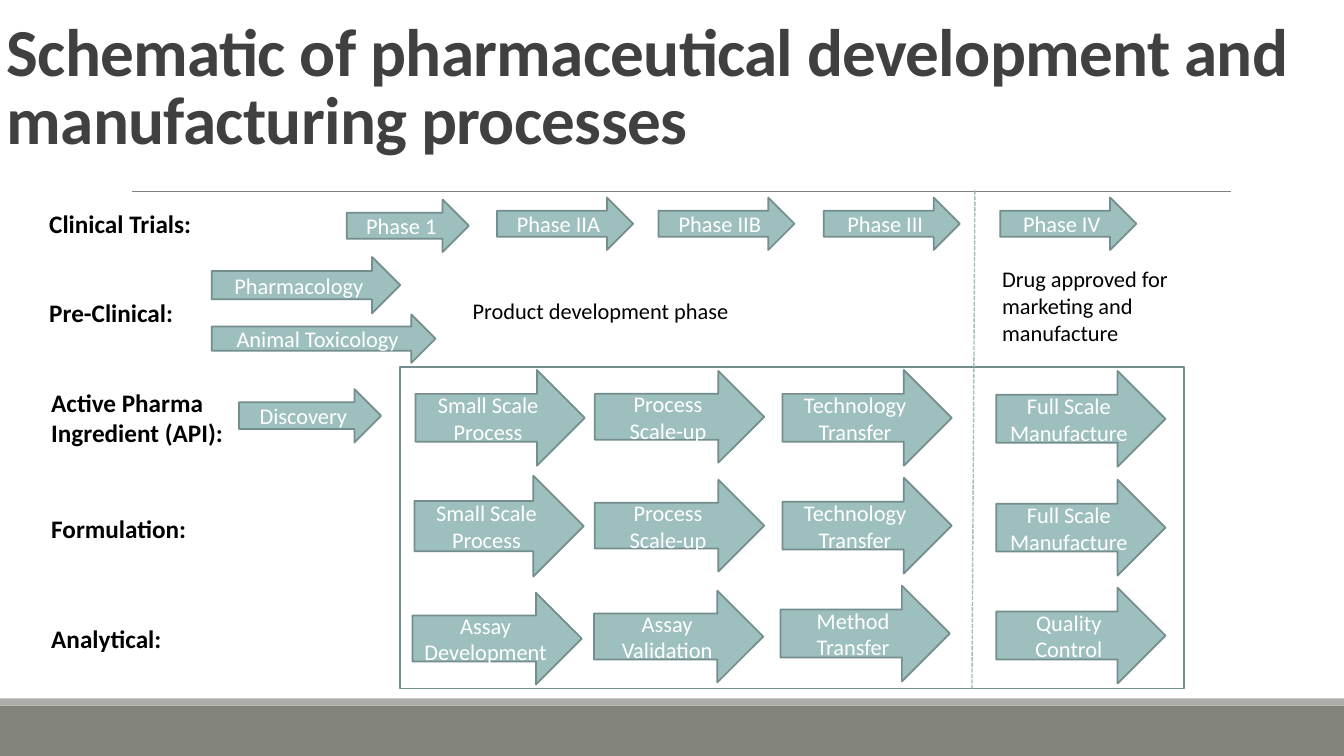
"""Build a slide showing the stages of pharmaceutical development and manufacture."""
from lxml import etree
from pptx import Presentation
from pptx import util as u
from pptx.dml.color import RGBColor
from pptx.enum import dml, shapes, text
from pptx.oxml import ns

hues = {"band": "82847C", "strip": "ACADA8", "rule": "808080", "title": "404040",
        "ink": "000000", "white": "FFFFFF", "teal": "9DBFBE", "edge": "748D8D"}
tone = {name: RGBColor.from_string(code) for name, code in hues.items()}

deck = Presentation()
deck.slide_width, deck.slide_height = u.Inches(13.33), u.Inches(7.5)
slide = deck.slides.add_slide(deck.slide_layouts[6])
parts = slide.shapes


def draw(kind, box, fill=None, edge=None):
    """Add a preset shape with flat fill and outline."""
    shape = parts.add_shape(kind, *map(u.Inches, box))
    shape.shadow.inherit = False
    if fill:
        shape.fill.solid()
        shape.fill.fore_color.rgb = tone[fill]
    else:
        shape.fill.background()
    if edge:
        shape.line.color.rgb = tone[edge]
        shape.line.width = u.Pt(1.25)
    else:
        shape.line.fill.background()
    return shape


def write(shape, words, hue, form, align=text.PP_ALIGN.LEFT, anchor=text.MSO_ANCHOR.TOP):
    """Put one wrapped paragraph into a shape and return its run."""
    frame = shape.text_frame
    frame.word_wrap = True
    frame.vertical_anchor = anchor
    para = frame.paragraphs[0]
    para.alignment = align
    run = para.add_run()
    run.text = words
    run.font.color.rgb = tone[hue]
    for key, value in form.items():
        setattr(run.font, key, value)
    return run


forms = {
    "title": {"name": "Calibri", "size": u.Pt(48), "bold": True},
    "label": {"name": "Calibri", "size": u.Pt(18), "bold": True},
    "body": {"name": "Calibri", "size": u.Pt(16), "bold": False},
}

draw(shapes.MSO_SHAPE.RECTANGLE, (0, 7, 13.33, 0.5), "band")
draw(shapes.MSO_SHAPE.RECTANGLE, (0, 6.93, 13.33, 0.07), "strip")

title = parts.add_textbox(*map(u.Inches, (-0.03, 0.03, 13.17, 1.59)))
run = write(title, "Schematic of pharmaceutical development and manufacturing processes",
            "title", forms["title"], anchor=text.MSO_ANCHOR.BOTTOM)
run.font._element.set("spc", "-50")
title.text_frame.paragraphs[0].line_spacing = 0.85

notes = [
    ("Clinical Trials:", (0.39, 2.02, 1.77, 0.4), "label"),
    ("Pre-Clinical:", (0.39, 2.9, 1.77, 0.4), "label"),
    ("Active Pharma Ingredient (API):", (0.41, 3.79, 2.08, 0.71), "label"),
    ("Formulation:", (0.41, 5.04, 2.35, 0.4), "label"),
    ("Analytical:", (0.41, 6.13, 2.19, 0.4), "label"),
    ("Product development phase", (4.59, 2.9, 3.64, 0.37), "body"),
    ("Drug approved for marketing and manufacture", (9.84, 2.58, 2.19, 0.91), "body"),
]
for words, box, form in notes:
    write(parts.add_textbox(*map(u.Inches, box)), words, "ink", forms[form])

steps = [
    ("Phase 1", (3.44, 1.98, 1.21, 0.52)),
    ("Pharmacology", (2.1, 2.55, 1.87, 0.56)),
    ("Animal Toxicology", (2.1, 3.12, 2.22, 0.48)),
    ("Discovery", (2.37, 3.86, 1.41, 0.53)),
]
for phase, left in [("IIA", 4.93), ("IIB", 6.53), ("III", 8.17), ("IV", 9.92)]:
    steps.append((f"Phase {phase}", (left, 1.96, 1.35, 0.52)))

stages = [
    [("Small Scale Process", 4.12, 3.67, 0.95), ("Small Scale Process", 4.11, 4.72, 1),
     ("Assay Development", 4.09, 5.88, 0.91)],
    [("Process Scale-up", 5.9, 3.68, 0.91), ("Process Scale-up", 5.9, 4.76, 0.91),
     ("Assay Validation", 5.89, 5.86, 0.91)],
    [("Technology Transfer", 7.76, 3.67, 0.95), ("Technology Transfer", 7.76, 4.74, 0.95),
     ("Method Transfer", 7.74, 5.81, 0.95)],
    [("Full Scale Manufacture", 9.88, 3.68, 0.95), ("Full Scale Manufacture", 9.88, 4.76, 0.95),
     ("Quality Control", 9.88, 5.83, 0.95)],
]
for stage in stages:
    for words, left, top, height in stage:
        steps.append((words, (left, top, 1.68, height)))

for words, box in steps:
    arrow = draw(shapes.MSO_SHAPE.RIGHT_ARROW, box, "teal", "edge")
    write(arrow, words, "white", forms["body"], text.PP_ALIGN.CENTER, text.MSO_ANCHOR.MIDDLE)

draw(shapes.MSO_SHAPE.RECTANGLE, (3.97, 3.64, 7.77, 3.19), edge="edge")

rules = [
    ((1.31, 1.9, 12.21, 1.9), "rule", 0.5, dml.MSO_LINE.SOLID),
    ((9.67, 1.89, 9.64, 6.83), "teal", 1, dml.MSO_LINE.SQUARE_DOT),
]
for ends, hue, width, dash in rules:
    rule = parts.add_connector(shapes.MSO_CONNECTOR.STRAIGHT, *map(u.Inches, ends))
    rule.line.color.rgb = tone[hue]
    rule.line.width = u.Pt(width)
    rule.line.dash_style = dash
    etree.SubElement(rule._element.spPr, ns.qn("a:effectLst"))

deck.save("out.pptx")
